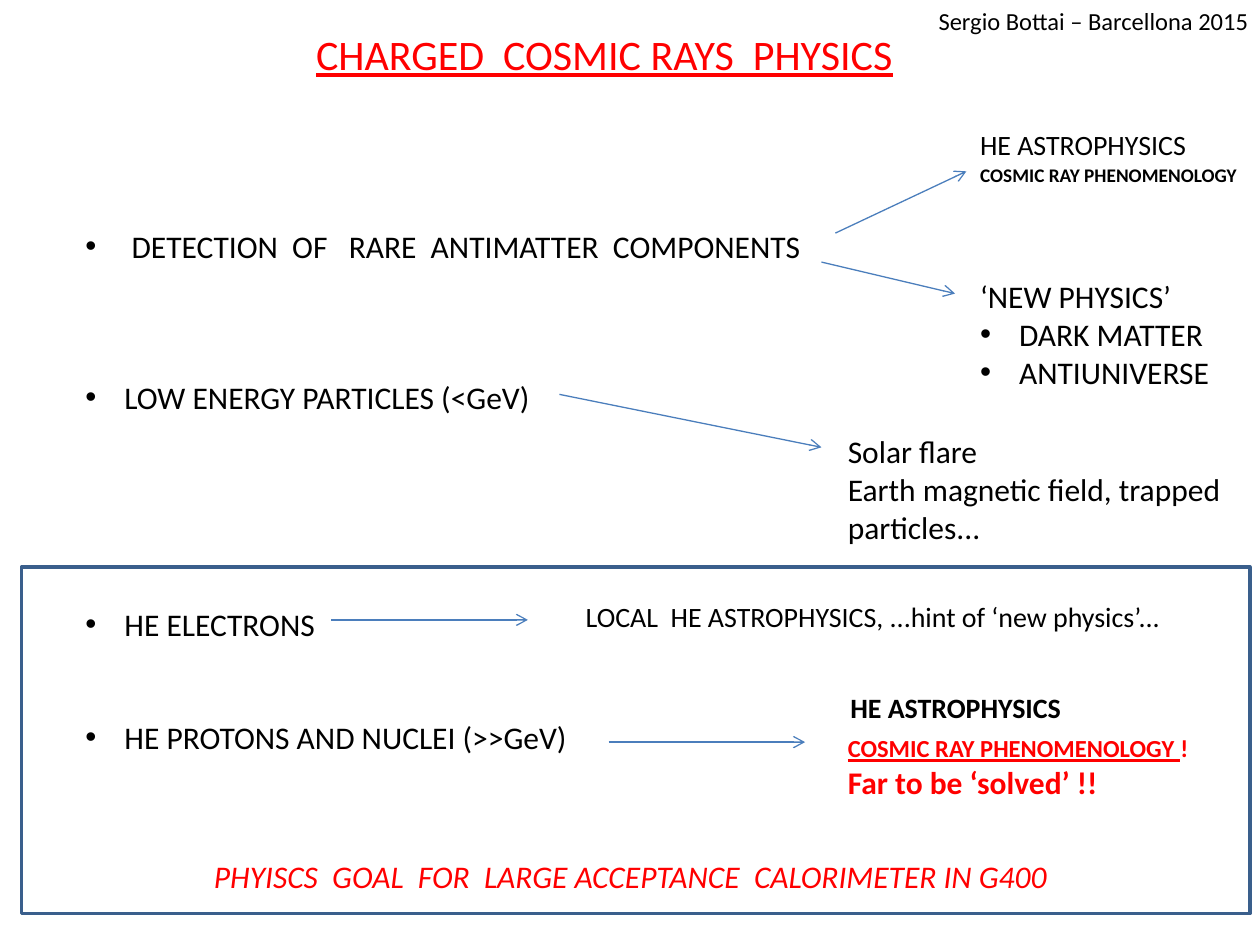
from lxml import etree
from pptx import Presentation
from pptx.dml.color import RGBColor
from pptx.enum.shapes import MSO_CONNECTOR, MSO_SHAPE
from pptx.enum.text import MSO_AUTO_SIZE
from pptx.oxml.ns import qn
from pptx.util import Inches, Pt

BLACK, RED = "000000", "FF0000"
ARROW_BLUE, FRAME_BLUE = "4B7EBC", "3A5F8C"
BULLET_INDENT = 0.31


def color(hex_code):
    return RGBColor.from_string(hex_code)


def add_bullet(paragraph):
    props = paragraph._p.get_or_add_pPr()
    props.set("marL", str(Inches(BULLET_INDENT)))
    props.set("indent", str(Inches(-BULLET_INDENT)))
    etree.SubElement(props, qn("a:buFont")).set("typeface", "Arial")
    etree.SubElement(props, qn("a:buChar")).set("char", "•")


def add_text(slide, box, lines, size=18, fill=BLACK, bold=False, italic=False,
             underline=False, bullets=(), gaps=None, wrap=False):
    """Write lines in box; bullets holds line numbers, gaps maps them to space before."""
    left, top, width, height = box
    frame = slide.shapes.add_textbox(
        Inches(left), Inches(top), Inches(width), Inches(height)).text_frame
    frame.word_wrap = wrap
    frame.auto_size = MSO_AUTO_SIZE.SHAPE_TO_FIT_TEXT
    for number, line in enumerate(lines):
        paragraph = frame.paragraphs[0] if number == 0 else frame.add_paragraph()
        if gaps and number in gaps:
            paragraph.space_before = Pt(gaps[number])
        if number in bullets:
            add_bullet(paragraph)
        # A line is a string, or a list of (text, format changes)
        for words, changes in [(line, {})] if isinstance(line, str) else line:
            run = paragraph.add_run()
            run.text = words
            run.font.name = "Calibri"
            run.font.size = Pt(changes.get("size", size))
            run.font.bold = bold
            run.font.italic = italic
            run.font.underline = changes.get("underline", underline)
            run.font.color.rgb = color(fill)


def add_arrow(slide, start, end):
    arrow = slide.shapes.add_connector(
        MSO_CONNECTOR.STRAIGHT, *(Inches(value) for value in (*start, *end)))
    arrow.line.color.rgb = color(ARROW_BLUE)
    arrow.line.width = Pt(0.75)
    etree.SubElement(arrow.line._get_or_add_ln(), qn("a:tailEnd")).set("type", "arrow")
    etree.SubElement(arrow._element.spPr, qn("a:effectLst"))


def add_header(slide, x, y):
    add_text(slide, (x + 2.41, y + 0.18, 5.25, 0.5),
             ["CHARGED  COSMIC RAYS  PHYSICS"],
             size=24, fill=RED, underline=True, wrap=True)
    add_text(slide, (x + 7.35, y, 2.69, 0.34),
             ["Sergio Bottai – Barcellona 2015"], size=14)


def add_topics(slide, x, y):
    line_height = 21.6
    add_text(slide, (x, y, 5.93, 4.34), [
        " DETECTION  OF   RARE  ANTIMATTER  COMPONENTS",
        "LOW ENERGY PARTICLES (<GeV)",
        "HE ELECTRONS",
        "HE PROTONS AND NUCLEI (>>GeV)",
    ], bullets=range(4),
        gaps={1: 3 * line_height, 2: 5 * line_height, 3: 2 * line_height})


def add_antimatter_branch(slide, x, y):
    add_arrow(slide, (x - 1.05, y + 0.89), (x - 0.01, y + 0.4))
    add_arrow(slide, (x - 1.16, y + 1.12), (x - 0.1, y + 1.37))
    add_text(slide, (x, y, 1.95, 0.37), ["HE ASTROPHYSICS"], size=16)
    add_text(slide, (x, y + 0.29, 2.32, 0.29),
             ["COSMIC RAY PHENOMENOLOGY"], size=11, bold=True)
    add_text(slide, (x, y + 1.19, 2.04, 1.01),
             ["‘NEW PHYSICS’", "DARK MATTER", "ANTIUNIVERSE"], bullets=(1, 2))


def add_low_energy_branch(slide, x, y):
    add_arrow(slide, (x - 2.19, y - 0.25), (x - 0.11, y + 0.17))
    add_text(slide, (x, y, 3.25, 1.01),
             ["Solar flare", "Earth magnetic field, trapped", "particles..."])


def add_calorimeter_goal(slide, x, y, width, height):
    # Frame
    frame = slide.shapes.add_shape(
        MSO_SHAPE.RECTANGLE, Inches(x), Inches(y), Inches(width), Inches(height))
    frame.shadow.inherit = False
    frame.fill.background()
    frame.line.color.rgb = color(FRAME_BLUE)
    frame.line.width = Pt(2)

    # Electrons
    arrow_length = 1.56
    add_arrow(slide, (x + 2.46, y + 0.42), (x + 2.46 + arrow_length, y + 0.42))
    add_text(slide, (x + 4.38, y + 0.21, 4.99, 0.37),
             ["LOCAL  HE ASTROPHYSICS, ...hint of ‘new physics’..."], size=16)

    # Protons and nuclei
    add_arrow(slide, (x + 4.66, y + 1.39), (x + 4.66 + arrow_length, y + 1.39))
    add_text(slide, (x + 6.48, y + 0.93, 1.95, 0.37),
             ["HE ASTROPHYSICS"], size=16, bold=True)
    add_text(slide, (x + 6.46, y + 1.27, 2.92, 0.64), [
        [("COSMIC RAY PHENOMENOLOGY ", {"size": 14, "underline": True}),
         ("!", {"size": 14})],
        "Far to be ‘solved’ !!",
    ], fill=RED, bold=True)

    # Goal
    add_text(slide, (x + 1.43, y + 2.25, 7.03, 0.4),
             ["PHYISCS  GOAL  FOR  LARGE ACCEPTANCE  CALORIMETER IN G400"],
             fill=RED, italic=True)


def main():
    deck = Presentation()
    deck.slide_width, deck.slide_height = Inches(10), Inches(7.5)
    slide = deck.slides.add_slide(deck.slide_layouts[6])
    add_header(slide, 0, 0)
    add_topics(slide, 0.58, 1.75)
    add_antimatter_branch(slide, 7.68, 0.96)
    add_low_energy_branch(slide, 6.63, 3.38)
    add_calorimeter_goal(slide, 0.17, 4.5, 9.75, 2.75)
    deck.save("out.pptx")


if __name__ == "__main__":
    main()
